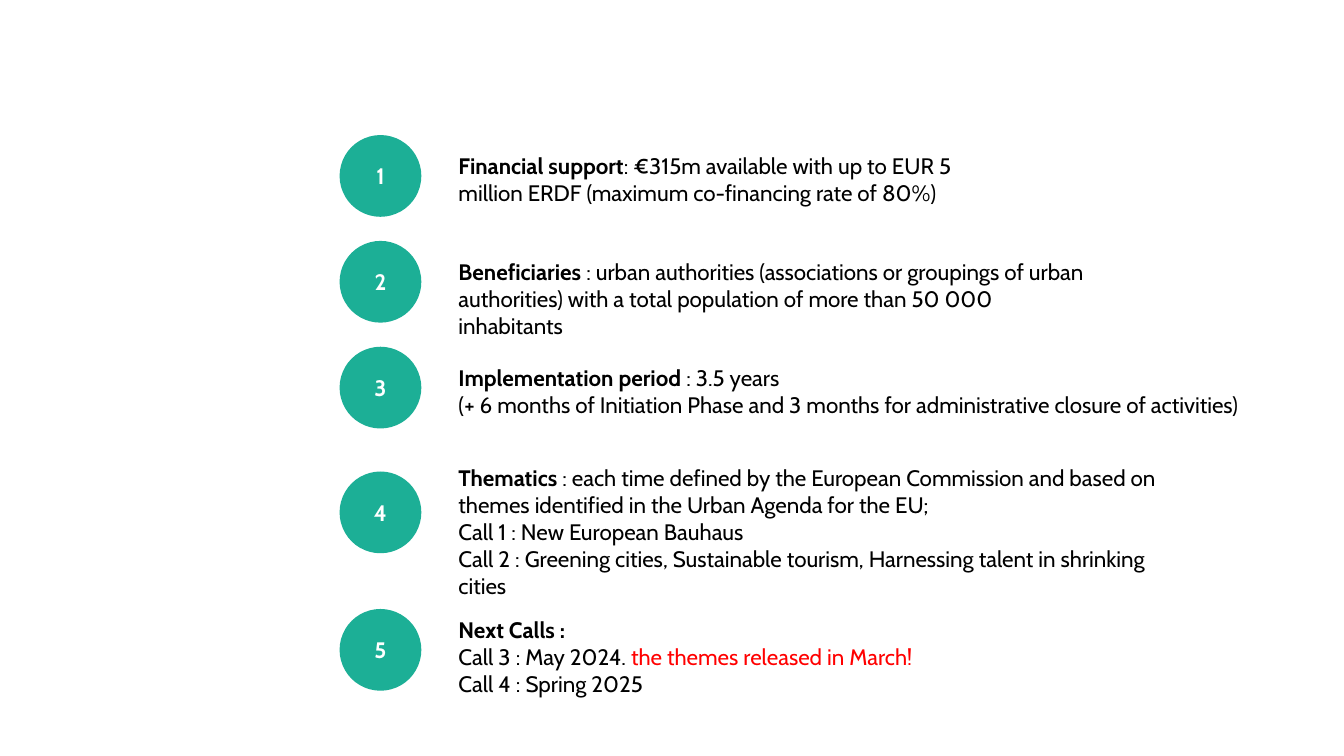
from pptx import Presentation
from pptx.dml.color import RGBColor
from pptx.enum.shapes import MSO_SHAPE
from pptx.enum.text import MSO_ANCHOR, MSO_AUTO_SIZE, PP_ALIGN
from pptx.util import Pt

COLORS = {"badge": "1CAF96", "number": "FFFFFF", "text": "000000", "alert": "FF0000"}
BADGE_LEFT, BADGE_SIZE, TEXT_LEFT = 242.6, 58.4, 320.4

# Each point: badge top, text top, text width, text height, paragraphs of (text, bold, colour)
POINTS = [
    (96.5, 105.1, 396.7, 46, [
        [("Financial support", True, "text"),
         (": €315m available with up to EUR 5 million ERDF "
          "(maximum co-financing rate of 80%)", False, "text")]]),
    (172.1, 180.7, 473.8, 65.5, [
        [("Beneficiaries ", True, "text"),
         (": urban authorities (associations or groupings of urban authorities) "
          "with a total population of more than 50 000 inhabitants", False, "text")]]),
    (247.7, 256.6, 586, 65.5, [
        [("Implementation period ", True, "text"), (": 3.5 years", False, "text")],
        [("(+ 6 months of Initiation Phase and 3 months for administrative "
          "closure of activities)", False, "text")]]),
    (336.8, 328.3, 527.8, 104.4, [
        [("Thematics ", True, "text"),
         (": each time defined by the European Commission and based on themes "
          "identified in the Urban Agenda for the EU;", False, "text")],
        [("Call 1 : New European Bauhaus", False, "text")],
        [("Call 2 : Greening cities, Sustainable tourism, Harnessing talent in "
          "shrinking cities", False, "text")]]),
    (435, 436.5, 396.7, 85, [
        [("Next Calls :", True, "text")],
        [("Call 3 : May 2024. ", False, "text"),
         ("the themes released in March!", False, "alert")],
        [("Call 4 : Spring 2025", False, "text")]]),
]


class SlideBuilder:
    """Holds the text style and the current slide, and draws its elements."""

    def __init__(self, page, font="Cabin", size=16):
        self.page = page
        self.font = font
        self.size = size

    def color(self, name):
        return RGBColor.from_string(COLORS[name])

    def format_span(self, span, bold, color):
        span.font.name = self.font
        span.font.size = Pt(self.size)
        span.font.bold = bold
        span.font.color.rgb = self.color(color)

    def badge(self, group, number, top):
        circle = group.shapes.add_shape(
            MSO_SHAPE.OVAL, Pt(BADGE_LEFT), Pt(top), Pt(BADGE_SIZE), Pt(BADGE_SIZE))
        circle.shadow.inherit = False
        circle.fill.solid()
        circle.fill.fore_color.rgb = self.color("badge")
        circle.line.fill.background()
        frame = circle.text_frame
        frame.text = str(number)
        frame.vertical_anchor = MSO_ANCHOR.MIDDLE
        para = frame.paragraphs[0]
        para.alignment = PP_ALIGN.CENTER
        self.format_span(para.runs[0], True, "number")

    def description(self, group, top, width, height, paragraphs):
        box = group.shapes.add_textbox(Pt(TEXT_LEFT), Pt(top), Pt(width), Pt(height))
        frame = box.text_frame
        frame.word_wrap = True
        frame.auto_size = MSO_AUTO_SIZE.SHAPE_TO_FIT_TEXT
        for index, spans in enumerate(paragraphs):
            para = frame.add_paragraph() if index else frame.paragraphs[0]
            for text, bold, color in spans:
                span = para.add_run()
                span.text = text
                self.format_span(span, bold, color)

    def point(self, number, badge_top, text_top, width, height, paragraphs):
        group = self.page.shapes.add_group_shape()
        self.badge(group, number, badge_top)
        self.description(group, text_top, width, height, paragraphs)


def main():
    deck = Presentation()
    deck.slide_width, deck.slide_height = Pt(960), Pt(540)
    builder = SlideBuilder(deck.slides.add_slide(deck.slide_layouts[6]))
    for number, point in enumerate(POINTS, start=1):
        builder.point(number, *point)
    deck.save("out.pptx")


if __name__ == "__main__":
    main()
